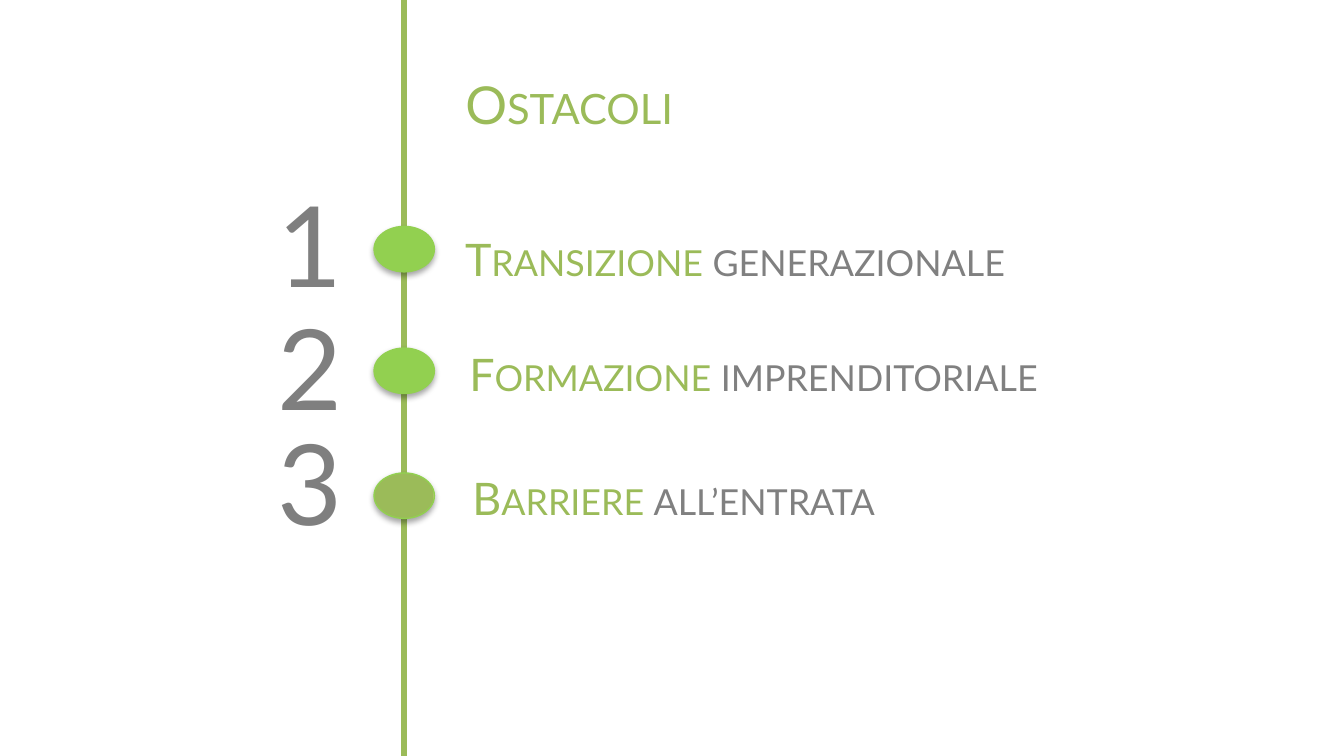
from lxml.etree import SubElement
from pptx import Presentation
from pptx.dml.color import RGBColor
from pptx.enum.shapes import MSO_CONNECTOR as Link, MSO_SHAPE as Shape
from pptx.enum.text import MSO_ANCHOR as Anchor, MSO_AUTO_SIZE as Fit, PP_ALIGN as Align
from pptx.oxml.ns import qn
from pptx.util import Cm, Pt

GREEN, LIME, PEACH, GREY, DARK = "9BBB59", "92D050", "FFD2BD", "808080", "7F7F7F"
AXIS = 7.64
WIDE, HIGH = 25.4, 14.29


def paint(color, code):
    color.rgb = RGBColor.from_string(code)


def write(box, runs, size, caps=True):
    frame = box.text_frame
    frame.word_wrap = False
    frame.auto_size = Fit.SHAPE_TO_FIT_TEXT
    frame.vertical_anchor = Anchor.TOP
    line = frame.paragraphs[0]
    line.alignment = Align.LEFT
    for text, code in runs:
        run = line.add_run()
        run.text = text
        run.font.name = "Lato"
        run.font.size = Pt(size)
        paint(run.font.color, code)
        if caps:
            run.font._element.set("cap", "small")


def add_title(slide, text):
    box = slide.shapes.title
    box.left, box.top, box.width, box.height = Cm(8.54), Cm(1.24), Cm(4.85), Cm(1.45)
    write(box, [(text, GREEN)], 28)


def add_text(slide, left, top, width, height, runs, size, caps=True):
    box = slide.shapes.add_textbox(Cm(left), Cm(top), Cm(width), Cm(height))
    write(box, runs, size, caps)


def add_axis(slide):
    line = slide.shapes.add_connector(Link.STRAIGHT, Cm(AXIS), Cm(HIGH), Cm(AXIS), Cm(0))
    paint(line.line.color, GREEN)
    line.line.width = Pt(3)
    SubElement(line._element.spPr, qn("a:effectLst"))


def add_shade(shape):
    shape.shadow.inherit = False
    effects = shape._element.spPr.find(qn("a:effectLst"))
    shade = SubElement(effects, qn("a:outerShdw"), blurRad="40000", dist="23000",
                       dir="5400000", rotWithShape="0")
    color = SubElement(shade, qn("a:srgbClr"), val="000000")
    SubElement(color, qn("a:alpha"), val="35000")


def add_dot(slide, top, code, share):
    width, height = 1.14, 0.86
    dot = slide.shapes.add_shape(Shape.OVAL, Cm(AXIS - width / 2), Cm(top), Cm(width), Cm(height))
    dot.fill.gradient()
    dot.fill.gradient_angle = 0
    for stop, (tone, place) in zip(dot.fill.gradient_stops, [(code, share), (PEACH, 1)]):
        paint(stop.color, tone)
        stop.position = place
    paint(dot.line.color, LIME)
    dot.line.width = Pt(0.75)
    add_shade(dot)


def main():
    deck = Presentation()
    deck.slide_width, deck.slide_height = Cm(WIDE), Cm(HIGH)
    slide = deck.slides.add_slide(deck.slide_layouts[5])
    add_axis(slide)
    add_title(slide, "Ostacoli")
    items = [
        ("Transizione ", "generazionale", (4.28, LIME, 1), (8.54, 4.26, 11.35), (3.2, 1.37)),
        ("Formazione ", "imprenditoriale", (6.58, LIME, 1), (8.62, 6.43, 11.79), (5.51, 1.63)),
        ("Barriere ", "all’entrata", (8.94, GREEN, 0.98), (8.68, 8.77, 8.97), (7.7, 1.63)),
    ]
    for rank, (key, rest, dot, place, digit) in enumerate(items, 1):
        add_dot(slide, *dot)
        add_text(slide, *place, 1.27, [(key, GREEN), (rest, GREY)], 24)
        add_text(slide, 5, *digit, 2.82, [(str(rank), DARK)], 60, caps=False)
    deck.save("out.pptx")


if __name__ == "__main__":
    main()
